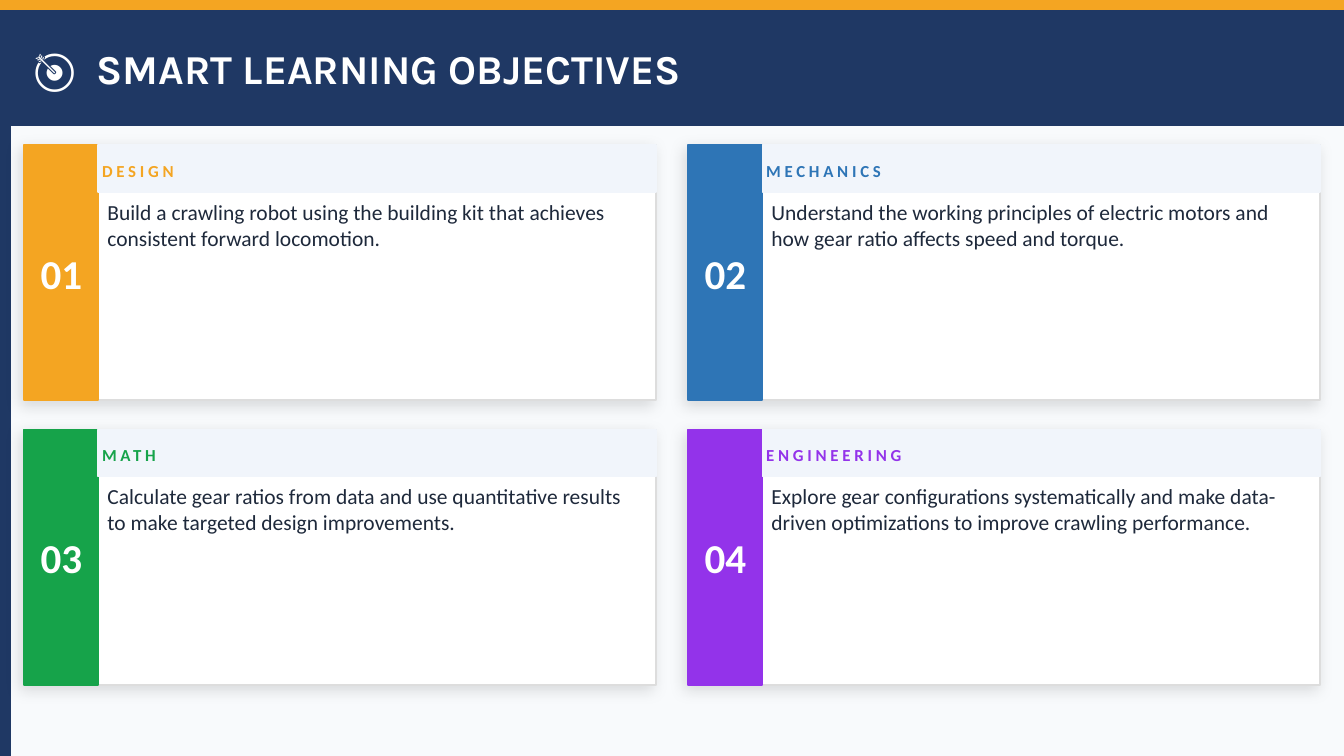
from dataclasses import dataclass

from lxml.etree import SubElement as Sub
from pptx import Presentation as Deck
from pptx.dml.color import RGBColor as Color
from pptx.enum.shapes import MSO_SHAPE as Kind
from pptx.enum.text import MSO_ANCHOR as Anchor, PP_ALIGN as Align
from pptx.oxml.ns import qn
from pptx.util import Cm, Pt


@dataclass(frozen=True)
class Theme:
    page: str = "F8FAFC"
    navy: str = "1F3864"
    gold: str = "F4A522"
    blue: str = "2E75B6"
    green: str = "16A34A"
    violet: str = "9333EA"
    white: str = "FFFFFF"
    edge: str = "DDDDDD"
    band: str = "F1F5FB"
    ink: str = "1E293B"
    shade: str = "000000"
    head: str = "Karla"
    font: str = "Calibri"
    big: float = 22
    text: float = 11.5
    small: float = 9


class Board:
    def __init__(self, slide, theme):
        self.slide = slide
        self.theme = theme
        fill = slide.background.fill
        fill.solid()
        fill.fore_color.rgb = Color.from_string(theme.page)

    def rect(self, x, y, w, h, fill, line=None):
        box = self.slide.shapes.add_shape(Kind.RECTANGLE, Cm(x), Cm(y), Cm(w), Cm(h))
        box.shadow.inherit = False
        box.fill.solid()
        box.fill.fore_color.rgb = Color.from_string(fill)
        box.line.color.rgb = Color.from_string(line or fill)
        box.line.width = Pt(1)
        return box

    def shade(self, box):
        group = box._element.spPr.find(qn("a:effectLst"))
        cast = Sub(group, qn("a:outerShdw"), blurRad=str(Pt(8)), dist=str(Pt(3)),
                   dir=str(135 * 60000), algn="bl", rotWithShape="0")
        tint = Sub(cast, qn("a:srgbClr"), val=self.theme.shade)
        Sub(tint, qn("a:alpha"), val="12000")

    def text(self, x, y, w, h, words, size, color, bold=False, font=None,
             align=Align.LEFT, anchor=Anchor.MIDDLE, space=0, tab=0):
        frame = self.slide.shapes.add_textbox(Cm(x), Cm(y), Cm(w), Cm(h)).text_frame
        frame.word_wrap = True
        frame.vertical_anchor = anchor
        frame.margin_left = frame.margin_right = 0
        frame.margin_top = frame.margin_bottom = 0
        para = frame.paragraphs[0]
        para.alignment = align
        if tab:
            stops = Sub(para._p.get_or_add_pPr(), qn("a:tabLst"))
            Sub(stops, qn("a:tab"), pos=str(Cm(tab)), algn="l")
        run = para.add_run()
        run.text = words
        run.font.name = font or self.theme.font
        run.font.size = Pt(size)
        run.font.bold = bold
        run.font.color.rgb = Color.from_string(color)
        if space:
            run._r.get_or_add_rPr().set("spc", str(space * 100))

    def card(self, x, y, mark, label, words, color):
        look = self.theme
        wide, high, strip = 11.94, 4.83, 1.4
        self.shade(self.rect(x, y, wide, high, look.white, look.edge))
        self.rect(x, y, strip, high, color)
        self.text(x, y, strip, high, mark, look.big, look.white, True,
                  align=Align.CENTER)
        self.rect(x + strip, y, wide - strip, 0.89, look.band)
        self.text(x + 1.47, y + 0.1, 10.29, 0.76, label, look.small, color, True,
                  space=2)
        self.text(x + 1.57, y + 1.02, 10.11, 3.61, words, look.text, look.ink,
                  anchor=Anchor.TOP)


def main():
    wide, high, edge = 25.4, 14.29, 0.2
    deck = Deck()
    deck.slide_width, deck.slide_height = Cm(wide), Cm(high)
    look = Theme()
    board = Board(deck.slides.add_slide(deck.slide_layouts[6]), look)

    board.rect(0, 0, wide, edge, look.gold)
    board.rect(0, edge, edge, high - edge, look.navy)
    board.rect(edge, edge, wide - edge, 2.16, look.navy)
    board.text(0.64, edge, 24.13, 2.16, "🎯\tSMART LEARNING OBJECTIVES", look.big,
               look.white, True, look.head, tab=1.19)

    goals = [
        ("DESIGN", look.gold,
         "Build a crawling robot using the building kit that achieves "
         "consistent forward locomotion."),
        ("MECHANICS", look.blue,
         "Understand the working principles of electric motors and how gear "
         "ratio affects speed and torque."),
        ("MATH", look.green,
         "Calculate gear ratios from data and use quantitative results to make "
         "targeted design improvements."),
        ("ENGINEERING", look.violet,
         "Explore gear configurations systematically and make data-driven "
         "optimizations to improve crawling performance."),
    ]
    for i, (label, color, words) in enumerate(goals):
        row, col = divmod(i, 2)
        board.card(0.46 + col * 12.55, 2.74 + row * 5.38, f"{i + 1:02}", label,
                   words, color)

    deck.save("out.pptx")


if __name__ == "__main__":
    main()
